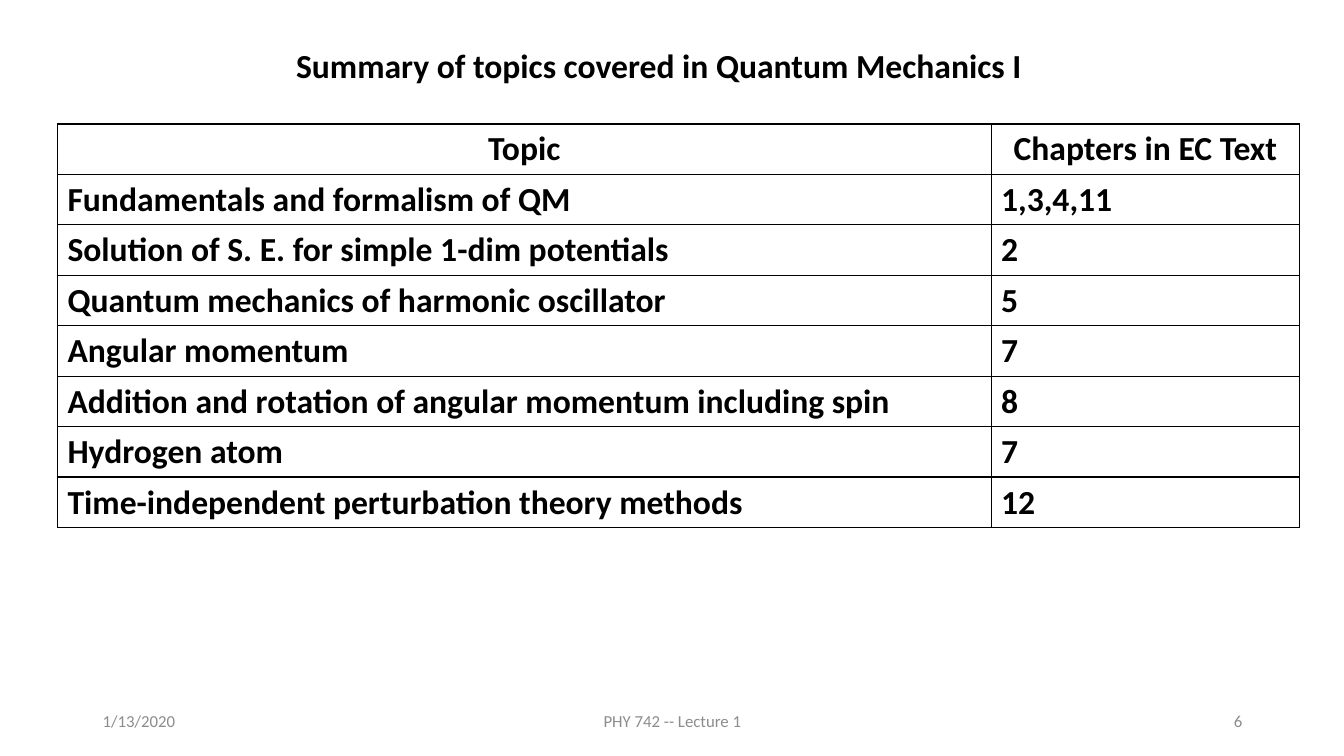
"""Build the slide that summarises the topics of Quantum Mechanics I."""
from pptx import Presentation
from pptx.dml.color import RGBColor
from pptx.enum.text import MSO_ANCHOR as Anchor, PP_ALIGN as Align
from pptx.oxml import parse_xml
from pptx.util import Inches, Pt

BLACK, GREY = "000000", "8C8C8C"
DRAWING_NS = "http://schemas.openxmlformats.org/drawingml/2006/main"


def color(hex_value):
    """Turn a hex string into a colour."""
    return RGBColor.from_string(hex_value)


def write(frame, text, size, hex_value, align, bold=False):
    """Write one formatted run into the first paragraph of a frame."""
    frame.word_wrap = True
    paragraph = frame.paragraphs[0]
    paragraph.alignment = align
    run = paragraph.add_run()
    run.text = text
    run.font.name = "Calibri"
    run.font.size = Pt(size)
    run.font.bold = bold
    run.font.color.rgb = color(hex_value)


deck = Presentation()
deck.slide_width, deck.slide_height = Inches(13.33), Inches(7.5)
slide = deck.slides.add_slide(deck.slide_layouts[6])

footers = [
    ("1/13/2020", 0.92, 3, Align.LEFT),
    ("PHY 742 -- Lecture 1", 4.42, 4.5, Align.CENTER),
    ("6", 9.42, 3, Align.RIGHT),
]
for text, left, width, align in footers:
    footer = slide.shapes.add_textbox(Inches(left), Inches(6.95), Inches(width), Inches(0.4))
    footer.text_frame.vertical_anchor = Anchor.MIDDLE
    write(footer.text_frame, text, 12, GREY, align)

title = slide.shapes.add_textbox(Inches(1.22), Inches(0.4), Inches(10.63), Inches(0.5))
write(title.text_frame, "Summary of topics covered in Quantum Mechanics I", 24, BLACK, Align.CENTER, bold=True)

topics = [
    ("Topic", "Chapters in EC Text"),
    ("Fundamentals and formalism of QM", "1,3,4,11"),
    ("Solution of S. E. for simple 1-dim potentials", "2"),
    ("Quantum mechanics of harmonic oscillator", "5"),
    ("Angular momentum", "7"),
    ("Addition and rotation of angular momentum including spin", "8"),
    ("Hydrogen atom", "7"),
    ("Time-independent perturbation theory methods", "12"),
]
summary = slide.shapes.add_table(
    len(topics), 2, Inches(0.57), Inches(1.23), Inches(12.32), Inches(4)
).table
summary.first_row = summary.horz_banding = False
summary.columns[0].width, summary.columns[1].width = Inches(9.26), Inches(3.06)

for row, entry in enumerate(topics):
    summary.rows[row].height = Inches(0.5)
    for column, text in enumerate(entry):
        cell = summary.cell(row, column)
        align = Align.CENTER if row == 0 else Align.LEFT
        write(cell.text_frame, text, 24, BLACK, align, bold=True)
        properties = cell._tc.get_or_add_tcPr()
        for side in ("lnL", "lnR", "lnT", "lnB"):
            properties.append(parse_xml(
                f'<a:{side} xmlns:a="{DRAWING_NS}" w="{Pt(1)}"><a:solidFill>'
                f'<a:srgbClr val="{BLACK}"/></a:solidFill></a:{side}>'
            ))
        cell.fill.background()

deck.save("out.pptx")
